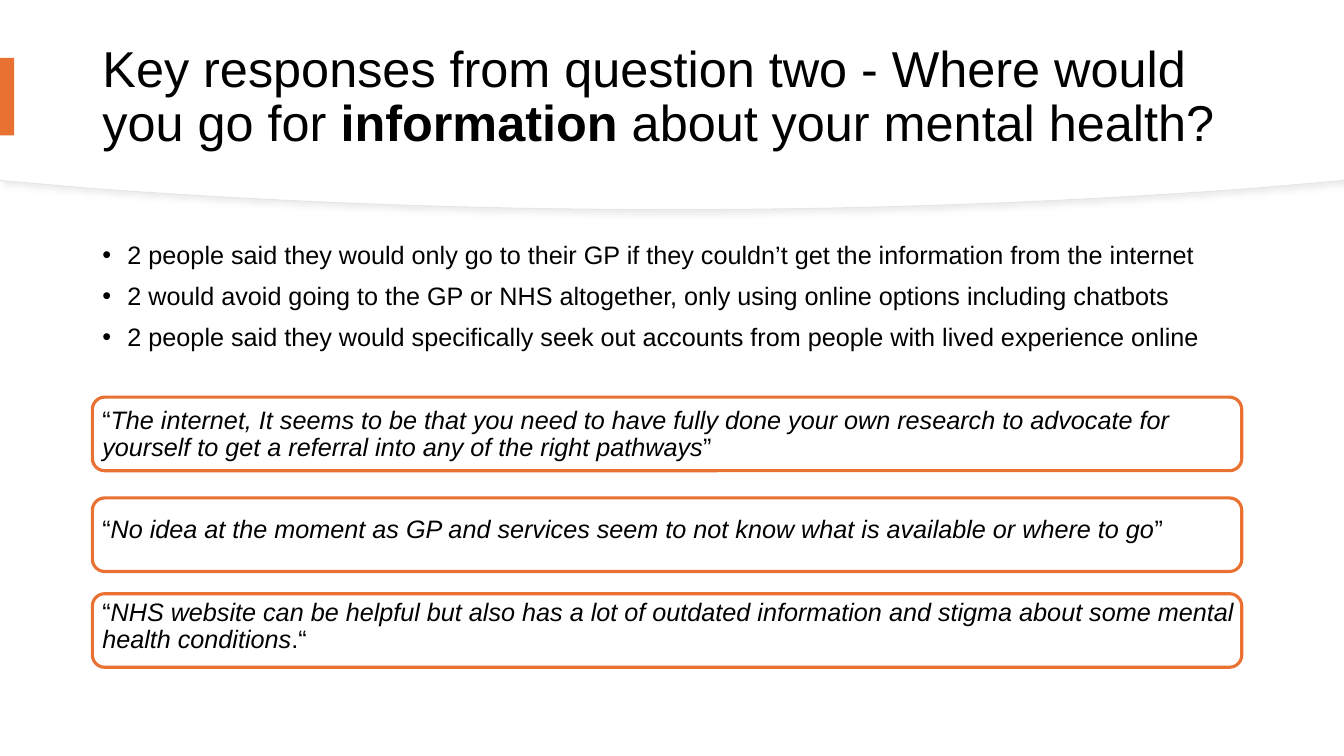
from lxml import etree
from pptx import Presentation
from pptx import util as u
from pptx.dml.color import RGBColor
from pptx.enum import shapes, text
from pptx.oxml import parse_xml
from pptx.oxml.ns import qn

ORANGE, WHITE, BLACK = "E97132", "FFFFFF", "000000"
DRAWING = "http://schemas.openxmlformats.org/drawingml/2006/main"


def paint(target, color):
    if hasattr(target, "solid"):
        target.solid()
        target = target.fore_color
    target.rgb = RGBColor.from_string(color)


def add_span(para, wording, **styles):
    span = para.add_run()
    span.text = wording
    for name, value in {"name": "Arial", "bold": False, "italic": False, **styles}.items():
        setattr(span.font, name, value)
    paint(span.font.color, BLACK)


deck = Presentation()
deck.slide_width, deck.slide_height = u.Pt(960), u.Pt(540)
page = deck.slides.add_slide(deck.slide_layouts[5])

corners = [(960, 0), (960, 128.88), (894.24, 134.64), (480, 149.76), (65.76, 134.64), (0, 128.88)]
bends = {3: [(766.8, 144), (627.12, 149.76)], 4: [(332.88, 149.76), (193.2, 144)]}

for lift, has_outline in [(0, True), (0.72, False)]:
    outline = page.shapes.build_freeform(0, 0)
    outline.add_line_segments(
        [(u.Pt(x), u.Pt(y - lift if y else 0)) for x, y in corners], close=True)
    header = outline.convert_to_shape()
    segments = list(header._element.iter(qn("a:lnTo")))
    for position, controls in bends.items():
        segment = segments[position]
        segment.tag = qn("a:cubicBezTo")
        for place, (x, y) in enumerate(controls):
            point = etree.Element(qn("a:pt"), x=str(u.Pt(x)), y=str(u.Pt(y - lift)))
            segment.insert(place, point)
    header.shadow.inherit = False
    paint(header.fill, WHITE)
    if has_outline:
        paint(header.line.fill, "E6E6E6")
        header.line.width = u.Pt(0.75)
        effects = header._element.spPr.find(qn("a:effectLst"))
        effects.append(parse_xml(
            f'<a:outerShdw xmlns:a="{DRAWING}" blurRad="50800" dist="38100" dir="2700000">'
            '<a:srgbClr val="D9D9D9"><a:alpha val="50000"/></a:srgbClr></a:outerShdw>'))
    else:
        header.line.fill.background()

title = page.shapes.title
title._element.getparent().append(title._element)
title.left, title.top, title.width, title.height = [u.Pt(v) for v in (66, 20.16, 828, 100.08)]
frame = title.text_frame
for name, value in {"word_wrap": True, "auto_size": text.MSO_AUTO_SIZE.NONE,
                    "vertical_anchor": text.MSO_ANCHOR.MIDDLE}.items():
    setattr(frame, name, value)
heading = frame.paragraphs[0]
heading.alignment, heading.line_spacing = text.PP_ALIGN.LEFT, 0.9
for wording, bold in [("Key responses from question two - Where would you go for ", False),
                      ("information", True), (" about your mental health?", False)]:
    add_span(heading, wording, size=u.Pt(36), bold=bold)

accent = page.shapes.add_shape(shapes.MSO_SHAPE.RECTANGLE, 0, u.Pt(41.3), u.Pt(10.08), u.Pt(55.44))
accent.shadow.inherit = False
paint(accent.fill, ORANGE)
accent.line.fill.background()

for top in (283.68, 355.68, 424.08):
    card = page.shapes.add_shape(
        shapes.MSO_SHAPE.ROUNDED_RECTANGLE, u.Pt(66), u.Pt(top), u.Pt(821), u.Pt(52.56))
    card.shadow.inherit = False
    paint(card.fill, WHITE)
    paint(card.line.fill, ORANGE)
    card.line.width = u.Pt(2.25)

findings = [
    "2 people said they would only go to their GP if they couldn’t get the information from the internet",
    "2 would avoid going to the GP or NHS altogether, only using online options including chatbots",
    "2 people said they would specifically seek out accounts from people with lived experience online",
]
quotes = [
    ("The internet, It seems to be that you need to have fully done your own research to advocate "
     "for yourself to get a referral into any of the right pathways", "”"),
    ("No idea at the moment as GP and services seem to not know what is available or where to go", "”"),
    ("NHS website can be helpful but also has a lot of outdated information and stigma about some "
     "mental health conditions", ".“"),
]

box = page.shapes.add_textbox(u.Pt(66), u.Pt(169.6), u.Pt(828), u.Pt(316.8))
frame = box.text_frame
frame.word_wrap = True
for number, finding in enumerate(findings):
    para = frame.paragraphs[0] if number == 0 else frame.add_paragraph()
    para.line_spacing = 0.9
    para.space_before = u.Pt(10 if number else 0)
    properties = para._p.get_or_add_pPr()
    properties.set("marL", str(u.Pt(18)))
    properties.set("indent", str(u.Pt(-18)))
    etree.SubElement(properties, qn("a:buFont")).set("typeface", "Arial")
    etree.SubElement(properties, qn("a:buChar")).set("char", "•")
    add_span(para, finding, size=u.Pt(18))

for quote, closing in quotes:
    para = frame.add_paragraph()
    para.line_spacing, para.space_before = 0.9, u.Pt(39.5)
    for wording, italic in [("“", False), (quote, True), (closing, False)]:
        add_span(para, wording, size=u.Pt(18), italic=italic)

deck.save("out.pptx")
